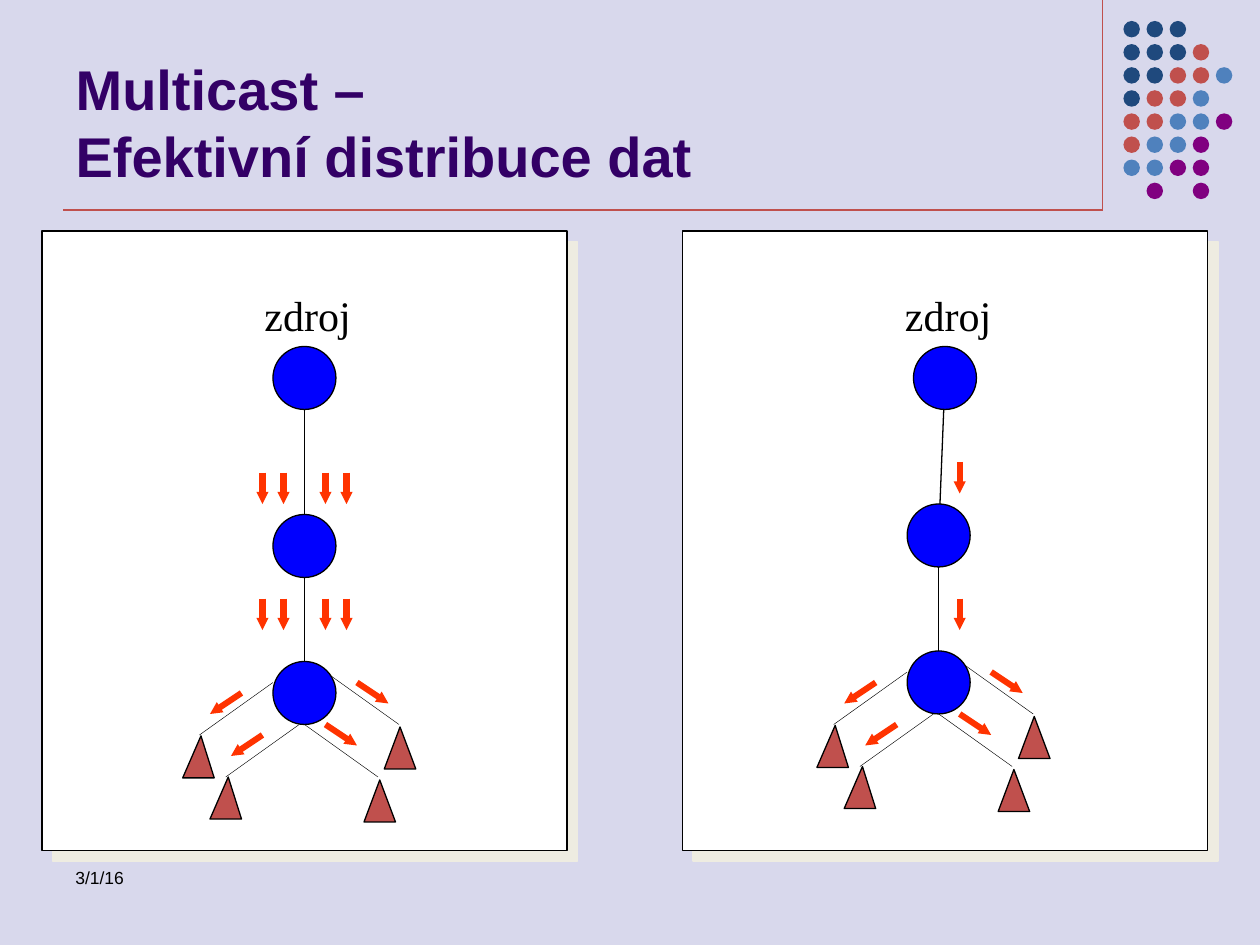
from lxml.etree import SubElement
from pptx import Presentation
from pptx.dml.color import RGBColor
from pptx.enum.shapes import MSO_CONNECTOR, MSO_SHAPE
from pptx.enum.text import MSO_ANCHOR, MSO_AUTO_SIZE, PP_ALIGN
from pptx.oxml.ns import qn
from pptx.util import Pt

NAVY, RED, BLUE, PURPLE = "1F497D", "C0504D", "4F81BD", "800080"
BLACK, WHITE, NODE_BLUE, ARROW_RED = "000000", "FFFFFF", "0000FF", "FF3300"
DOT_ROWS = ["NNN", "NNNR", "NNRRB", "NRRB", "RRBBP", "RBBP", "BBPP", " P P"]
DOT_COLORS = {"N": NAVY, "R": RED, "B": BLUE, "P": PURPLE}
NODE_SIZE = 36
ARROW_LENGTH = 18
BRANCHES = [((60, 66), (18, 36)), ((15, 36), (-27, 66)),
            ((0, 12), (-42, 42)), ((72, 36), (30, 6))]
RECEIVERS = [(-36, 66, 0.58), (52, 67.7, 0.5), (-51.6, 42.5, 0.58), (63.6, 37.4, 0.5)]
BRANCH_ARROWS = [((48, 12), (66, 24)), ((-18, 18), (-36, 30)),
                 ((30, 36), (48, 48)), ((-6, 42), (-24, 54))]


def color(hex_value):
    return RGBColor.from_string(hex_value)


def add_figure(slide, kind, left, top, width, height, fill, outline=None):
    shape = slide.shapes.add_shape(kind, Pt(left), Pt(top), Pt(width), Pt(height))
    shape.shadow.inherit = False
    shape.fill.solid()
    shape.fill.fore_color.rgb = color(fill)
    if outline:
        shape.line.color.rgb = color(outline)
        shape.line.width = Pt(0.75)
    else:
        shape.line.fill.background()
    return shape


def add_line(slide, start, end, line_color=BLACK, width=0.75, arrow=False):
    connector = slide.shapes.add_connector(
        MSO_CONNECTOR.STRAIGHT, *(Pt(value) for value in (*start, *end)))
    connector.line.color.rgb = color(line_color)
    connector.line.width = Pt(width)
    if arrow:
        SubElement(connector.line._get_or_add_ln(), qn("a:tailEnd"),
                   type="triangle", w="sm", len="sm")
    SubElement(connector._element.spPr, qn("a:effectLst"))


def add_arrow(slide, start, end):
    add_line(slide, start, end, ARROW_RED, 3.5, arrow=True)


def format_text(shape, text, font_format, frame_format):
    frame = shape.text_frame
    frame.text = text
    for name, value in frame_format.items():
        setattr(frame, name, value)
    paragraph = frame.paragraphs[0]
    paragraph.alignment = PP_ALIGN.LEFT
    for run in paragraph.runs:
        for name, value in font_format.items():
            setattr(run.font, name, value)
        run.font.color.rgb = color("330066" if font_format.get("bold") else BLACK)


def add_text(slide, text, left, top, width, height, font_format, wrap):
    box = slide.shapes.add_textbox(Pt(left), Pt(top), Pt(width), Pt(height))
    format_text(box, text, font_format, {"word_wrap": wrap, "margin_right": Pt(0)})


def place_title(slide, left, top, width, height):
    title = slide.shapes.title
    bounds = {"left": left, "top": top, "width": width, "height": height}
    for name, value in bounds.items():
        setattr(title, name, Pt(value))
    format_text(title, "Multicast – \vEfektivní distribuce dat",
                {"name": "Arial", "size": Pt(32), "bold": True},
                {"vertical_anchor": MSO_ANCHOR.BOTTOM, "word_wrap": True,
                 "auto_size": MSO_AUTO_SIZE.NONE})


def draw_dots(slide, left, top, pitch, size):
    for row, letters in enumerate(DOT_ROWS):
        for column, letter in enumerate(letters):
            if letter in DOT_COLORS:
                add_figure(slide, MSO_SHAPE.OVAL, left + column * pitch,
                           top + row * pitch, size, size, DOT_COLORS[letter])


def draw_card(slide, left, top, width, height):
    card = add_figure(slide, MSO_SHAPE.RECTANGLE, left, top, width, height, WHITE, BLACK)
    effects = card._element.spPr.find(qn("a:effectLst"))
    shadow = SubElement(effects, qn("a:outerShdw"), dist=str(Pt(8.5)),
                        dir="2700000", algn="ctr", rotWithShape="0")
    SubElement(shadow, qn("a:srgbClr"), val="EEECE1")


def draw_fan(slide, left, top):
    def place(point):
        return left + point[0], top + point[1]

    for start, end in BRANCHES:
        add_line(slide, place(start), place(end), width=0.25)
    for x, y, apex in RECEIVERS:
        receiver = add_figure(slide, MSO_SHAPE.ISOSCELES_TRIANGLE,
                              left + x, top + y, 18, 24, RED, BLACK)
        receiver.adjustments[0] = apex
    for start, end in BRANCH_ARROWS:
        add_arrow(slide, place(start), place(end))


def draw_panel(slide, left, top, width, height, nodes, arrow_offsets, arrow_tops):
    draw_card(slide, left, top, width, height)
    add_text(slide, "zdroj", left + 120, top + 30, 63, 36,
             {"name": "Times New Roman", "size": Pt(24)}, wrap=False)
    centers = [(left + x, top + y) for x, y in nodes]
    for start, end in zip(centers, centers[1:]):
        add_line(slide, start, end)
    radius = NODE_SIZE / 2
    router_x, router_y = centers[-1]
    draw_fan(slide, router_x - radius, router_y - radius)
    for x, y in centers:
        add_figure(slide, MSO_SHAPE.OVAL, x - radius, y - radius,
                   NODE_SIZE, NODE_SIZE, NODE_BLUE, BLACK)
    for arrow_top in arrow_tops:
        for offset in arrow_offsets:
            x, y = router_x + offset, top + arrow_top
            add_arrow(slide, (x, y), (x, y + ARROW_LENGTH))


def main():
    presentation = Presentation()
    presentation.slide_width, presentation.slide_height = Pt(720), Pt(540)
    slide = presentation.slides.add_slide(presentation.slide_layouts[5])
    slide.background.fill.solid()
    slide.background.fill.fore_color.rgb = color("D8D8EC")

    add_line(slide, (630, 0), (630, 120), RED)
    add_line(slide, (36, 120), (630, 120), RED)
    draw_dots(slide, 642, 12, 13.2, 9.4)
    place_title(slide, 36, 9.5, 594, 102)
    add_text(slide, "3/1/16", 36, 492, 168, 36,
             {"name": "Arial", "size": Pt(10)}, wrap=True)
    draw_panel(slide, 24, 132, 300, 354, [(150, 84), (150, 180), (150, 264)],
               [-24, -12, 12, 24], [138, 210])
    draw_panel(slide, 390, 132, 300, 354, [(150, 84), (146.4, 174), (146.4, 258)],
               [12], [132, 210])
    presentation.save("out.pptx")


if __name__ == "__main__":
    main()
